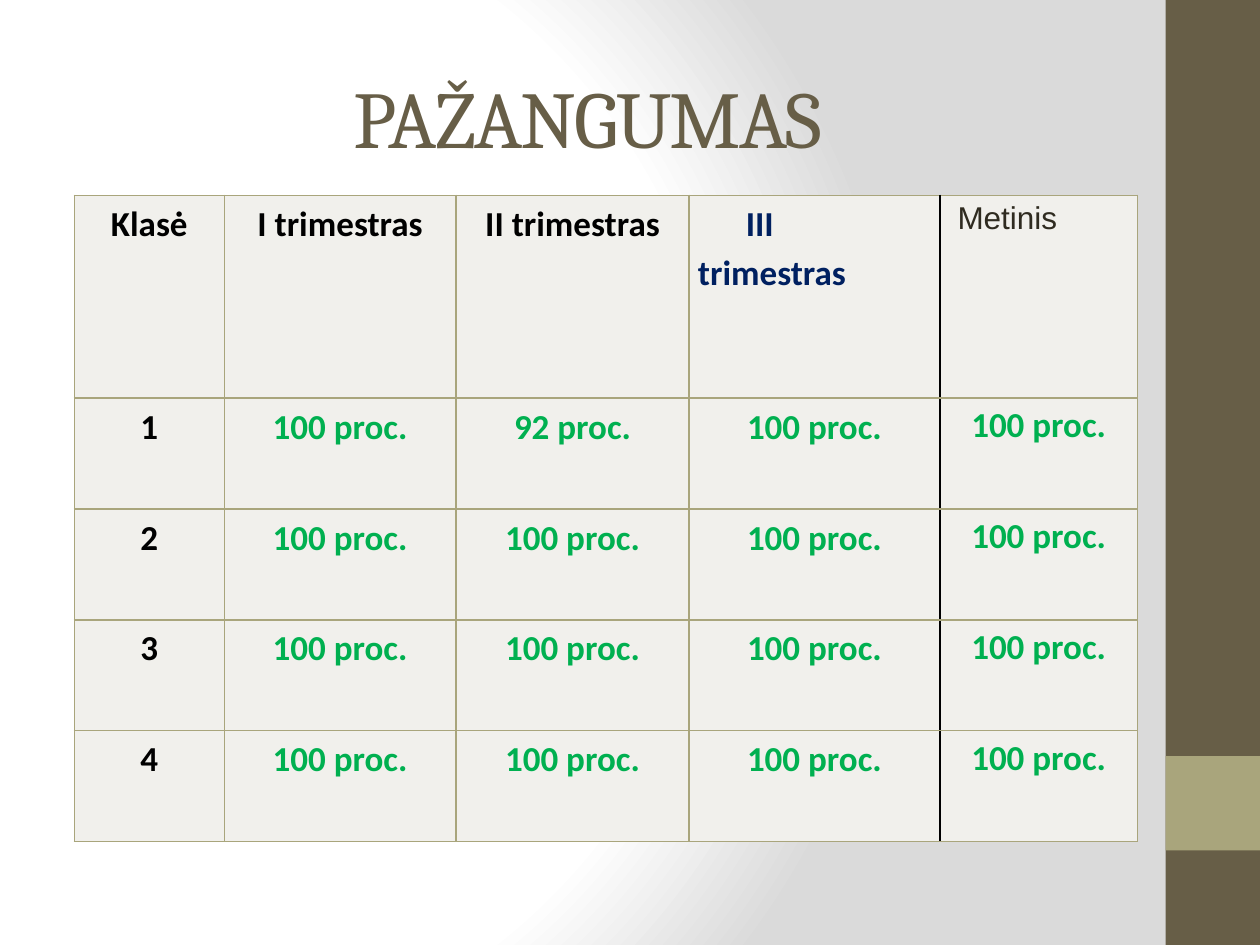
from pptx import Presentation
from pptx import util as u
from pptx.dml.color import RGBColor
from pptx.enum import shapes, text
from pptx.oxml import parse_xml
from pptx.oxml.ns import nsdecls

COLORS = {
    "brown": "675E47", "olive": "A9A57C", "cell": "F1F0EC", "black": "000000",
    "navy": "002060", "green": "00B050", "ink": "2F2B20",
    "white": "FFFFFF", "grey": "DADADA",
}
BODY = {"name": "Calibri", "size": u.Pt(20), "bold": True}
ANNUAL = {"name": "Arial", "size": u.Pt(18), "bold": False}
TITLE = {"name": "Cambria", "size": u.Pt(46), "bold": False}
COLUMN_WIDTHS = [1.19, 1.84, 1.85, 1.99, 1.57]
ROW_HEIGHTS = [1.61] + [0.88] * 4
HEADERS = ["Klasė", "I trimestras", "II trimestras", "III\vtrimestras", "Metinis"]
RESULTS = [
    [100, 92, 100, 100],
    [100, 100, 100, 100],
    [100, 100, 100, 100],
    [100, 100, 100, 100],
]


def rgb(color):
    return RGBColor.from_string(COLORS[color])


def set_background(slide):
    stops = "".join(
        f'<a:gs pos="{position * 1000}"><a:srgbClr val="{COLORS[color]}"/></a:gs>'
        for position, color in [(0, "white"), (75, "white"), (100, "grey")]
    )
    slide.element.cSld.insert(0, parse_xml(
        f'<p:bg {nsdecls("p", "a")}><p:bgPr><a:gradFill rotWithShape="1">'
        f'<a:gsLst>{stops}</a:gsLst><a:path path="circle">'
        '<a:fillToRect l="20000" t="50000" r="100000" b="50000"/></a:path>'
        '</a:gradFill><a:effectLst/></p:bgPr></p:bg>'
    ))


def add_band(slide, top, height, color):
    band = slide.shapes.add_shape(
        shapes.MSO_SHAPE.RECTANGLE, u.Inches(9.25), u.Inches(top), u.Inches(0.75), u.Inches(height)
    )
    band.shadow.inherit = False
    band.fill.solid()
    band.fill.fore_color.rgb = rgb(color)
    band.line.fill.background()


def write(paragraph, wording, style, color, align=text.PP_ALIGN.CENTER):
    paragraph.text = wording
    paragraph.alignment = align
    for run in paragraph.runs:
        for key, value in style.items():
            setattr(run.font, key, value)
        run.font.color.rgb = rgb(color)


def add_title(slide):
    title = slide.shapes.add_textbox(u.Inches(0.5), u.Inches(0.3), u.Inches(8.33), u.Inches(1.25))
    frame = title.text_frame
    frame.word_wrap = True
    frame.vertical_anchor = text.MSO_ANCHOR.MIDDLE
    paragraph = frame.paragraphs[0]
    write(paragraph, "PAŽANGUMAS", TITLE, "brown")
    paragraph.runs[0].font._element.set("spc", "-100")


def set_borders(cell, colors):
    properties = cell._tc.get_or_add_tcPr()
    for side, color in colors.items():
        properties.append(parse_xml(
            f'<a:ln{side} {nsdecls("a")} w="12700"><a:solidFill>'
            f'<a:srgbClr val="{COLORS[color]}"/></a:solidFill></a:ln{side}>'
        ))


def fill_cell(cell, column, wording, style, color, indent):
    inset = (0, 0) if column == 4 else (0.07, 0.01)
    margins = {"margin_left": inset[0], "margin_right": inset[0],
               "margin_top": inset[1], "margin_bottom": 0}
    for key, value in margins.items():
        setattr(cell, key, u.Inches(value))
    set_borders(cell, {
        "L": "black" if column == 4 else "olive",
        "R": "black" if column == 3 else "olive",
        "T": "olive", "B": "olive",
    })
    cell.fill.solid()
    cell.fill.fore_color.rgb = rgb("cell")
    paragraph = cell.text_frame.paragraphs[0]
    align = text.PP_ALIGN.LEFT if indent else text.PP_ALIGN.CENTER
    write(paragraph, wording, style, color, align)
    paragraph.line_spacing = 1.15
    if indent:
        paragraph._p.get_or_add_pPr().set("indent", str(u.Inches(indent)))


def add_results(slide):
    table = slide.shapes.add_table(
        5, 5, u.Inches(0.59), u.Inches(1.55), u.Inches(8.44), u.Inches(5.13)
    ).table
    table.first_row = table.horz_banding = False
    for column, width in zip(table.columns, COLUMN_WIDTHS):
        column.width = u.Inches(width)
    for row, height in zip(table.rows, ROW_HEIGHTS):
        row.height = u.Inches(height)

    header_looks = [(BODY, "black", 0)] * 3 + [(BODY, "navy", 0.38), (ANNUAL, "ink", 0.14)]
    for column, (header, look) in enumerate(zip(HEADERS, header_looks)):
        fill_cell(table.cell(0, column), column, header, *look)
    for grade, results in enumerate(RESULTS, 1):
        fill_cell(table.cell(grade, 0), 0, str(grade), BODY, "black", 0)
        for column, percent in enumerate(results, 1):
            fill_cell(table.cell(grade, column), column, f"{percent} proc.", BODY, "green", 0)


def main():
    """Build the slide of pupils' progress by grade and trimester."""
    deck = Presentation()
    deck.slide_width, deck.slide_height = u.Inches(10), u.Inches(7.5)
    slide = deck.slides.add_slide(deck.slide_layouts[6])
    set_background(slide)
    add_band(slide, 0, 7.5, "brown")
    add_band(slide, 6, 0.75, "olive")
    add_title(slide)
    add_results(slide)
    deck.save("out.pptx")


if __name__ == "__main__":
    main()
